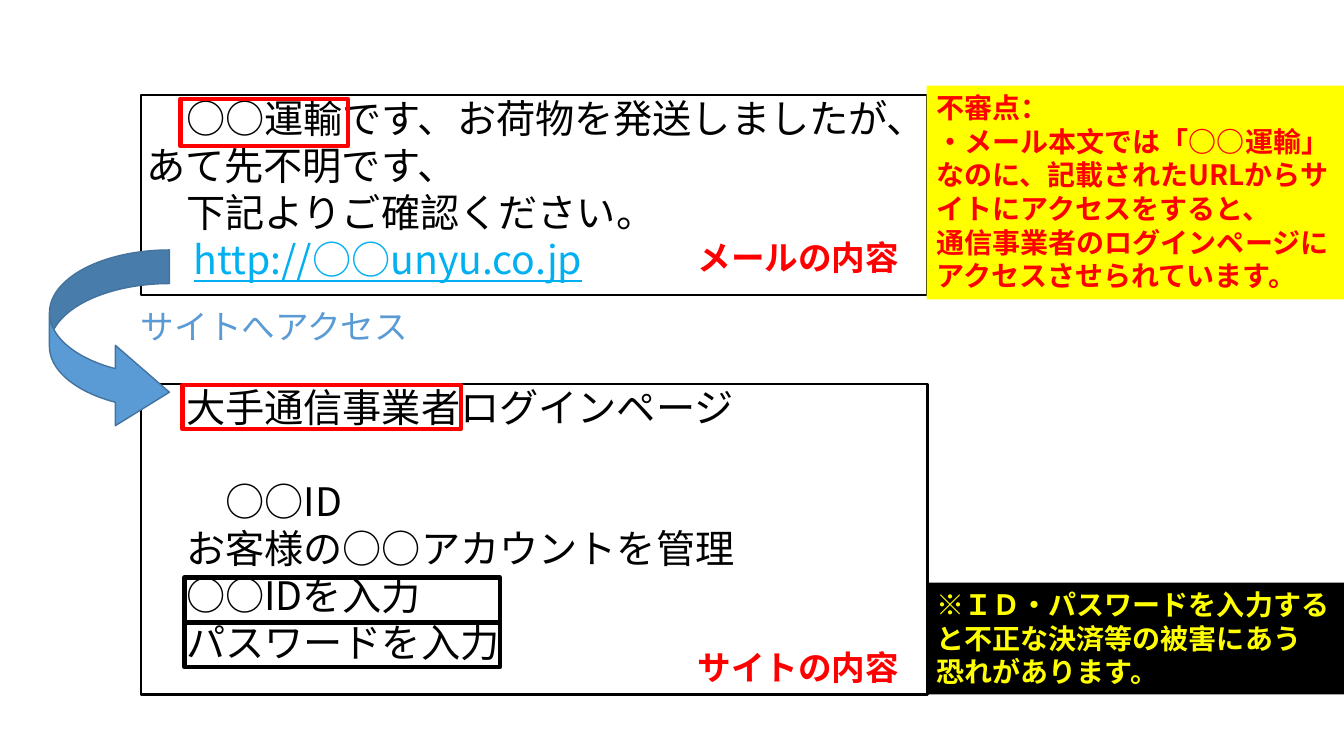
from dataclasses import dataclass
from pptx import Presentation, util as u
from pptx.dml.color import RGBColor
from pptx.enum import shapes, text
from pptx.oxml.ns import qn
from lxml import etree


@dataclass
class Theme:
    font: str = "Noto Sans CJK JP"
    black: str = "000000"
    red: str = "FF0000"
    yellow: str = "FFFF00"
    blue: str = "5B9BD5"
    edge: str = "43739E"
    link: str = "00B0F0"
    main: int = 28
    label: int = 24
    note: int = 20


class Page:
    def __init__(self, slide, theme):
        self.slide = slide
        self.theme = theme

    def fill_text(self, shape, paras, size, color, bold=False):
        frame = shape.text_frame
        frame.word_wrap = True
        frame.vertical_anchor = text.MSO_ANCHOR.TOP
        for i, (indent, gap, words, *link) in enumerate(paras):
            para = frame.paragraphs[0] if i == 0 else frame.add_paragraph()
            para.alignment = text.PP_ALIGN.LEFT
            para.line_spacing = u.Pt(size * 1.2)
            para.space_before = u.Pt(gap * size * 1.2)
            props = para._p.get_or_add_pPr()
            props.set("marL", str(u.Pt(indent * size)))
            props.set("indent", "0")
            run = para.add_run()
            run.text = words
            font = run.font
            font.name = self.theme.font
            font.size = u.Pt(size)
            font.bold = bold
            font.underline = bool(link)
            font.color.rgb = RGBColor.from_string(link[0] if link else color)
            east = etree.SubElement(run._r.get_or_add_rPr(), qn("a:ea"))
            east.set("typeface", self.theme.font)

    def label(self, box, paras, size, color, bold=False):
        shape = self.slide.shapes.add_textbox(*map(u.Inches, box))
        self.fill_text(shape, paras, size, color, bold)

    def shape(self, box, fill=None, line=None, width=1.5,
              kind=shapes.MSO_SHAPE.RECTANGLE):
        shape = self.slide.shapes.add_shape(kind, *map(u.Inches, box))
        shape.shadow.inherit = False
        if fill:
            shape.fill.solid()
            shape.fill.fore_color.rgb = RGBColor.from_string(fill)
        else:
            shape.fill.background()
        if line:
            shape.line.color.rgb = RGBColor.from_string(line)
            shape.line.width = u.Pt(width)
        else:
            shape.line.fill.background()
        return shape

    def note(self, box, fill, color, lines):
        shape = self.shape(box, fill)
        self.fill_text(shape, [(0, 0, line) for line in lines],
                       self.theme.note, color, True)

    def arrow(self, box, ratios):
        shape = self.shape(box, self.theme.blue, self.theme.edge, 1,
                           shapes.MSO_SHAPE.CURVED_RIGHT_ARROW)
        for i, ratio in enumerate(ratios):
            shape.adjustments[i] = ratio


def main():
    deck = Presentation()
    deck.slide_width = u.Inches(13.33)
    deck.slide_height = u.Inches(7.5)
    theme = Theme()
    page = Page(deck.slides.add_slide(deck.slide_layouts[6]), theme)

    page.label((0.97, 3.75, 7.38, 2.93), [
        (2, 0, "大手通信事業者ログインページ"),
        (3, 1, "○○ID"),
        (2, 0, "お客様の○○アカウントを管理"),
        (2, 0, "○○IDを入力"),
        (2, 0, "パスワードを入力"),
    ], theme.main, theme.black)
    page.label((0.97, 0.89, 8.23, 1.99), [
        (2, 0, "○○運輸です、お荷物を発送しましたが、"),
        (1, 0, "あて先不明です、"),
        (2, 0, "下記よりご確認ください。"),
        (2.2, 0, "http://○○unyu.co.jp", theme.link),
    ], theme.main, theme.black)
    page.label((1.3, 2.99, 3.47, 0.5), [(0, 0, "サイトへアクセス")],
               theme.label, theme.blue)

    for row in range(2):
        page.shape((1.83, 5.73 + row * 0.45, 3.13, 0.44),
                   line=theme.black, width=3)
    for top, height, low, name in ((0.94, 1.99, 2.3, "メールの内容"),
                                   (3.81, 3.08, 6.37, "サイトの内容")):
        page.shape((1.4, top, 7.8, height), line=theme.black)
        page.label((6.82, low, 2.38, 0.5), [(0, 0, name)],
                   theme.label, theme.red, True)

    page.note((9.19, 0.85, 4.14, 2.12), theme.yellow, theme.red, [
        "不審点：",
        "・メール本文では「○○運輸」なのに、記載されたURLからサイトにアクセスをすると、",
        "通信事業者のログインページにアクセスさせられています。",
    ])
    for box in ((1.79, 0.98, 1.66, 0.47), (1.81, 3.82, 2.76, 0.44)):
        page.shape(box, line=theme.red, width=3)
    page.note((9.19, 5.78, 4.14, 1.11), theme.black, theme.yellow, [
        "※ＩＤ・パスワードを入力すると不正な決済等の被害にあう　恐れがあります。",
    ])
    page.arrow((0.49, 2.48, 1.19, 1.81), (0.28, 0.67, 0.45))
    deck.save("out.pptx")


if __name__ == "__main__":
    main()
